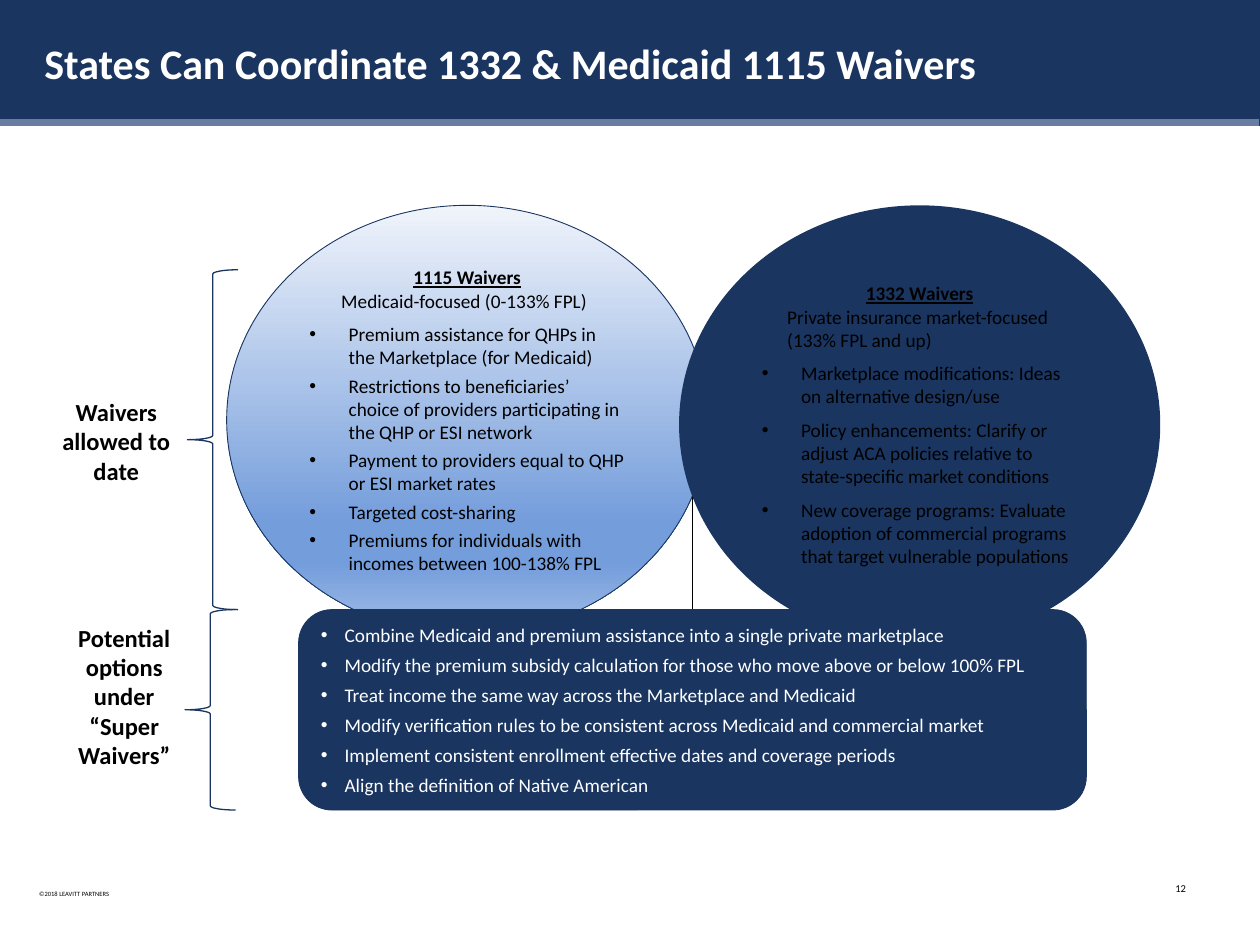
from lxml import etree
from pptx import Presentation
from pptx.dml.color import RGBColor
from pptx.enum.shapes import MSO_CONNECTOR, MSO_SHAPE
from pptx.enum.text import MSO_ANCHOR, PP_ALIGN
from pptx.oxml.ns import qn
from pptx.util import Cm, Pt

LEFT, CENTER, RIGHT = PP_ALIGN.LEFT, PP_ALIGN.CENTER, PP_ALIGN.RIGHT
MIDDLE, TOP = MSO_ANCHOR.MIDDLE, MSO_ANCHOR.TOP
STRAIGHT = MSO_CONNECTOR.STRAIGHT
RECT, OVAL = MSO_SHAPE.RECTANGLE, MSO_SHAPE.OVAL
ROUNDED, BRACE = MSO_SHAPE.ROUNDED_RECTANGLE, MSO_SHAPE.LEFT_BRACE

FONT = "Calibri"
NAVY, SLATE, BLACK, WHITE = "193560", "687DA1", "000000", "FFFFFF"
BLUE_FADE = [(0, "F0F4FB"), (74, "749DDB"), (83, "749DDB"), (100, "A2BDE7")]

TITLE = "States Can Coordinate 1332 & Medicaid 1115 Waivers"
COPYRIGHT = "©2018 LEAVITT PARTNERS"
PAGE_NUMBER = "12"

WAIVERS_1115 = {
    "heading": "1115 Waivers",
    "focus": ["Medicaid-focused (0-133% FPL)"],
    "focus_indent": 0.64,
    "bullet_gap": 3,
    "bullets": [
        "Premium assistance for QHPs in the Marketplace (for Medicaid)",
        "Restrictions to beneficiaries’ choice of providers participating in the QHP or ESI network",
        "Payment to providers equal to QHP or ESI market rates",
        "Targeted cost-sharing",
        "Premiums for individuals with incomes between 100-138% FPL",
    ],
}
WAIVERS_1332 = {
    "heading": "1332 Waivers",
    "focus": ["Private insurance market-focused", "(133% FPL and up)"],
    "focus_indent": 0.51,
    "bullet_gap": 6,
    "bullets": [
        "Marketplace modifications: Ideas on alternative design/use",
        "Policy enhancements: Clarify or adjust ACA policies relative to state-specific market conditions",
        "New coverage programs: Evaluate adoption of commercial programs that target vulnerable populations",
    ],
}
SUPER_WAIVERS = [
    "Combine Medicaid and premium assistance into a single private marketplace",
    "Modify the premium subsidy calculation for those who move above or below 100% FPL",
    "Treat income the same way across the Marketplace and Medicaid",
    "Modify verification rules to be consistent across Medicaid and commercial market",
    "Implement consistent enrollment effective dates and coverage periods",
    "Align the definition of Native American",
]

# Geometry in centimetres
SLIDE_W, SLIDE_H = 25.4, 19.05
CIRCLE_TOP, CIRCLE_W = 4.14, 9.7
SUPER_TOP, SUPER_H = 12.29, 4.04
SUPER_LEFT, SUPER_W = 6.02, 15.88
BRACE_W, BRACE_TOP = 1.02, 5.44
SIDE_LABELS = [  # text, label box, brace box
    ("Waivers allowed to date", (0.86, 7.87, 2.97, 2.06),
     (3.78, BRACE_TOP, BRACE_W, SUPER_TOP - BRACE_TOP)),
    ("Potential options under “Super Waivers”", (1.02, 12.42, 2.97, 3.25),
     (3.73, SUPER_TOP, BRACE_W, SUPER_H)),
]


def rgb(color):
    return RGBColor.from_string(color)


def box(values):
    return [Cm(value) for value in values]


def add_shape(slide, kind, place, fill=None, line=None, weight=0.5):
    shape = slide.shapes.add_shape(kind, *box(place))
    shape.shadow.inherit = False
    if fill:
        shape.fill.solid()
        shape.fill.fore_color.rgb = rgb(fill)
    else:
        shape.fill.background()
    if line:
        shape.line.color.rgb = rgb(line)
        shape.line.width = Pt(weight)
    else:
        shape.line.fill.background()
    return shape


def fade_down(shape, stops):
    """Fill the shape with a vertical gradient of (percent, colour) stops."""
    shape.fill.gradient()
    shape.fill.gradient_angle = 270
    stop_list = shape._element.spPr.find(qn("a:gradFill")).find(qn("a:gsLst"))
    for old_stop in list(stop_list):
        stop_list.remove(old_stop)
    for percent, color in stops:
        stop = etree.SubElement(stop_list, qn("a:gs"), pos=str(percent * 1000))
        etree.SubElement(stop, qn("a:srgbClr"), val=color)


def add_line(slide, ends, color, weight):
    line = slide.shapes.add_connector(STRAIGHT, *box(ends))
    line.line.color.rgb = rgb(color)
    line.line.width = Pt(weight)
    etree.SubElement(line._element.spPr, qn("a:effectLst"))
    return line


def write(frame, index, text, size, color, align=LEFT, bold=False,
          underline=False, indent=0, bullet=False, after=0, level=0):
    paragraph = frame.add_paragraph() if index else frame.paragraphs[0]
    paragraph.alignment = align
    paragraph.level = level
    paragraph.space_after = Pt(after)
    properties = paragraph._p.get_or_add_pPr()
    properties.set("marL", str(Cm(indent)))
    properties.set("indent", str(-Cm(indent) if bullet else 0))
    if bullet:
        etree.SubElement(properties, qn("a:buFont"), typeface="Arial")
        etree.SubElement(properties, qn("a:buChar"), char="•")
    run = paragraph.add_run()
    run.text = text
    font = run.font
    font.name, font.size, font.bold, font.underline = FONT, Pt(size), bold, underline
    font.color.rgb = rgb(color)
    return paragraph


def add_label(slide, place, text, size, align, bold=False, wrap=True, insets=(0.25, 0.13)):
    frame = slide.shapes.add_textbox(*box(place)).text_frame
    frame.word_wrap = wrap
    frame.vertical_anchor = TOP
    frame.margin_left = frame.margin_right = Cm(insets[0])
    frame.margin_top = frame.margin_bottom = Cm(insets[1])
    write(frame, 0, text, size, BLACK, align, bold)


def write_waivers(circle, waivers):
    frame = circle.text_frame
    frame.vertical_anchor = MIDDLE
    write(frame, 0, waivers["heading"], 11, BLACK, CENTER, bold=True, underline=True)
    for line in waivers["focus"]:
        last = line == waivers["focus"][-1]
        write(frame, 1, line, 11, BLACK, indent=waivers["focus_indent"], after=6 if last else 0)
    for bullet in waivers["bullets"]:
        write(frame, 1, bullet, 11, BLACK, indent=0.79, bullet=True, after=waivers["bullet_gap"])
    if waivers["bullet_gap"] < 6:
        frame.paragraphs[-1].space_after = Pt(0)


def main():
    deck = Presentation()
    deck.slide_width, deck.slide_height = Cm(SLIDE_W), Cm(SLIDE_H)
    slide = deck.slides.add_slide(deck.slide_layouts[5])

    add_shape(slide, RECT, (0, 0, SLIDE_W, 2.54), NAVY)
    add_label(slide, (0.64, 17.86, 1.78, 0.3), COPYRIGHT, 3.7, LEFT, wrap=False, insets=(0.15, 0.08))
    add_label(slide, (23.27, 17.7, 0.79, 0.41), PAGE_NUMBER, 6, RIGHT, insets=(0.15, 0.08))
    add_line(slide, (-0.02, 2.46, SLIDE_W - 0.02, 2.46), SLATE, 4)

    medicaid = add_shape(slide, OVAL, (4.57, CIRCLE_TOP, CIRCLE_W, 8.66), line=NAVY)
    fade_down(medicaid, BLUE_FADE)
    write_waivers(medicaid, WAIVERS_1115)

    middle = SUPER_LEFT + SUPER_W / 2
    arrow = add_line(slide, (middle, SUPER_TOP, middle, 8.74), BLACK, 1)
    etree.SubElement(arrow.line._get_or_add_ln(), qn("a:tailEnd"), type="triangle")

    for text, label_place, brace_place in SIDE_LABELS:
        add_shape(slide, BRACE, brace_place, line=NAVY, weight=0.75)
        add_label(slide, label_place, text, 14, CENTER, bold=True)

    private = add_shape(slide, OVAL, (13.69, CIRCLE_TOP, CIRCLE_W, 8.84), NAVY)
    write_waivers(private, WAIVERS_1332)

    options = add_shape(slide, ROUNDED, (SUPER_LEFT, SUPER_TOP, SUPER_W, SUPER_H), NAVY, NAVY)
    options.text_frame.vertical_anchor = MIDDLE
    for index, option in enumerate(SUPER_WAIVERS):
        last = index == len(SUPER_WAIVERS) - 1
        write(options.text_frame, index, option, 11, WHITE, indent=0.48,
              bullet=True, after=0 if last else 4, level=1)
    arrow.begin_connect(options, 0)

    title = slide.shapes.title
    title.left, title.top, title.width, title.height = box((0.64, 0.48, 24.05, 1.7))
    title.text_frame.vertical_anchor = MIDDLE
    write(title.text_frame, 0, TITLE, 24, WHITE, bold=True).line_spacing = 0.9
    slide.shapes._spTree.append(title._element)  # in front of the header band

    deck.save("out.pptx")


if __name__ == "__main__":
    main()
